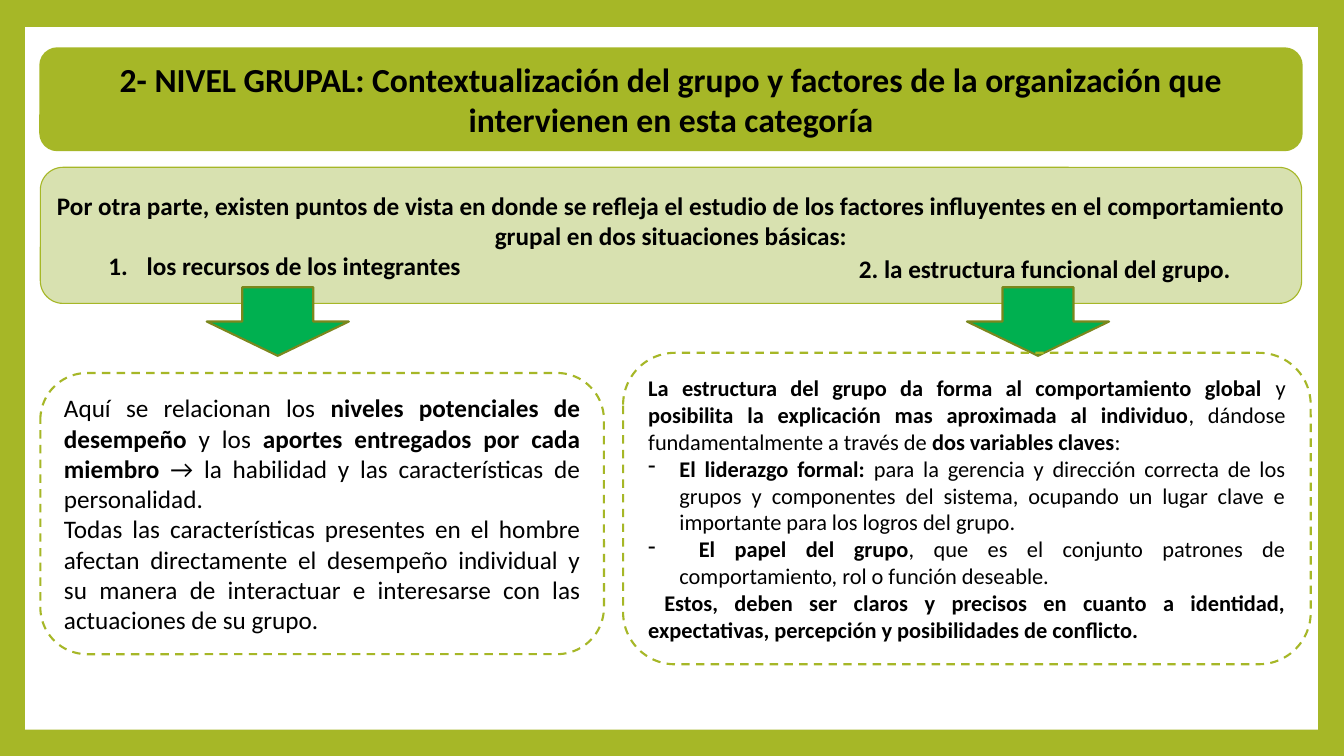
import pptx
import pptx.util
import pptx.dml.color
import pptx.enum.dml
import pptx.enum.shapes
import pptx.enum.text
from lxml import etree
from pptx.oxml.ns import qn

Inches = pptx.util.Inches
SHAPE = pptx.enum.shapes.MSO_SHAPE
ALIGN = pptx.enum.text.PP_ALIGN
MIDDLE = pptx.enum.text.MSO_ANCHOR.MIDDLE

COLORS = {"olive": "A6B727", "dark_olive": "7B871D", "pale": "D8E1B0",
          "green": "00B050", "white": "FFFFFF", "black": "000000"}


def rgb(name):
    return pptx.dml.color.RGBColor.from_string(COLORS[name])


def add_text(p, text, size=18, bold=False, color="black", font="Calibri"):
    r = p.add_run()
    r.text = text
    r.font.size = pptx.util.Pt(size)
    r.font.bold = bold
    r.font.name = font
    r.font.color.rgb = rgb(color)


def set_indent(p, left=0, first=0, bullet=None, number=None):
    pPr = p._p.get_or_add_pPr()
    pPr.set("marL", str(Inches(left)))
    pPr.set("indent", str(Inches(first)))
    if bullet:
        etree.SubElement(pPr, qn("a:buFontTx"))
        etree.SubElement(pPr, qn("a:buChar"), char=bullet)
    elif number:
        etree.SubElement(pPr, qn("a:buFont"), typeface="+mj-lt")
        etree.SubElement(pPr, qn("a:buAutoNum"), type=number)


class Slide:
    def __init__(self, prs, background):
        self.s = prs.slides.add_slide(prs.slide_layouts[6])
        fill = self.s.background.fill
        fill.solid()
        fill.fore_color.rgb = rgb(background)

    def shape(self, kind, x, y, w, h, fill=None, line=None, width=1.5, dashed=False):
        sp = self.s.shapes.add_shape(kind, Inches(x), Inches(y), Inches(w), Inches(h))
        sp.shadow.inherit = False
        if fill:
            sp.fill.solid()
            sp.fill.fore_color.rgb = rgb(fill)
        else:
            sp.fill.background()
        if line:
            sp.line.color.rgb = rgb(line)
            sp.line.width = pptx.util.Pt(width)
        else:
            sp.line.fill.background()
        if dashed:
            sp.line.dash_style = pptx.enum.dml.MSO_LINE.DASH
        return sp

    def paragraphs(self, sp, items, align, size=18):
        """Each item is (indent options, [(text, bold), ...])."""
        tf = sp.text_frame
        tf.word_wrap = True
        tf.vertical_anchor = MIDDLE
        for i, (indent, runs) in enumerate(items):
            p = tf.add_paragraph() if i else tf.paragraphs[0]
            p.alignment = align
            if indent:
                set_indent(p, **indent)
            for text, bold in runs:
                add_text(p, text, size=size, bold=bold)
        return tf

    def panel(self, x, y, w, h, items, align=ALIGN.JUSTIFY, size=18, **style):
        sp = self.shape(SHAPE.ROUNDED_RECTANGLE, x, y, w, h, line="olive", **style)
        return self.paragraphs(sp, items, align, size)

    def label(self, x, y, w, h, items):
        sp = self.s.shapes.add_textbox(Inches(x), Inches(y), Inches(w), Inches(h))
        return self.paragraphs(sp, items, ALIGN.LEFT)


def main():
    prs = pptx.Presentation()
    prs.slide_width, prs.slide_height = Inches(13.33), Inches(7.5)
    slide = Slide(prs, "olive")
    slide.shape(SHAPE.RECTANGLE, 0.25, 0.27, 12.82, 6.97, fill="white")

    # Title
    slide.panel(0.4, 0.48, 12.51, 1.01, [
        ({}, [("2- NIVEL GRUPAL: Contextualización del grupo y factores de la "
               "organización que intervienen en esta categoría", True)]),
    ], align=ALIGN.CENTER, size=24, fill="olive")

    # Introduction with the two situations
    tf = slide.panel(0.4, 1.66, 12.51, 1.35, [
        ({}, [("Por otra parte, existen puntos de vista en donde se refleja el "
               "estudio de los factores influyentes en el comportamiento grupal "
               "en dos situaciones básicas:", True)]),
        ({"left": 0.89, "first": -0.38, "number": "arabicPeriod"},
         [("los recursos de los integrantes", True)]),
    ], align=ALIGN.CENTER, fill="pale", width=0.79)
    tf.paragraphs[1].alignment = ALIGN.LEFT
    slide.label(8.42, 2.46, 4.2, 0.4,
                [({}, [("2. la estructura funcional del grupo.", True)])])

    # Arrows to the two explanations
    for x in (2.05, 9.59):
        slide.shape(SHAPE.DOWN_ARROW, x, 2.85, 1.41, 0.68,
                    fill="green", line="dark_olive")

    # Resources of the members
    slide.panel(0.4, 3.7, 5.59, 2.79, [
        ({}, [("Aquí se relacionan los ", False),
              ("niveles potenciales de desempeño", True),
              (" y los ", False),
              ("aportes entregados por cada miembro ", True),
              ("→ la habilidad y las características de personalidad.", False)]),
        ({}, [("Todas las características presentes en el hombre afectan "
               "directamente el desempeño individual y su manera de interactuar "
               "e interesarse con las actuaciones de su grupo.", False)]),
    ], dashed=True)

    # Functional structure of the group
    dash = {"left": 0.31, "first": -0.31, "bullet": "-"}
    slide.panel(6.18, 3.5, 6.82, 3.09, [
        ({}, [("La estructura del grupo da forma al comportamiento global ", True),
              ("y ", False),
              ("posibilita la explicación mas aproximada al individuo", True),
              (", dándose fundamentalmente a través de ", False),
              ("dos variables claves", True),
              (":", False)]),
        (dash, [("El liderazgo formal: ", True),
                ("para la gerencia y dirección correcta de los grupos y "
                 "componentes del sistema, ocupando un lugar clave e importante "
                 "para los logros del grupo.", False)]),
        (dash, [(" El papel del grupo", True),
                (", que es el conjunto patrones de comportamiento, rol o función "
                 "deseable.", False)]),
        ({"first": 0.16}, [("Estos, deben ser claros y precisos en cuanto a "
                            "identidad, expectativas, percepción y posibilidades "
                            "de conflicto.", True)]),
    ], size=16, dashed=True)

    prs.save("out.pptx")


if __name__ == "__main__":
    main()
